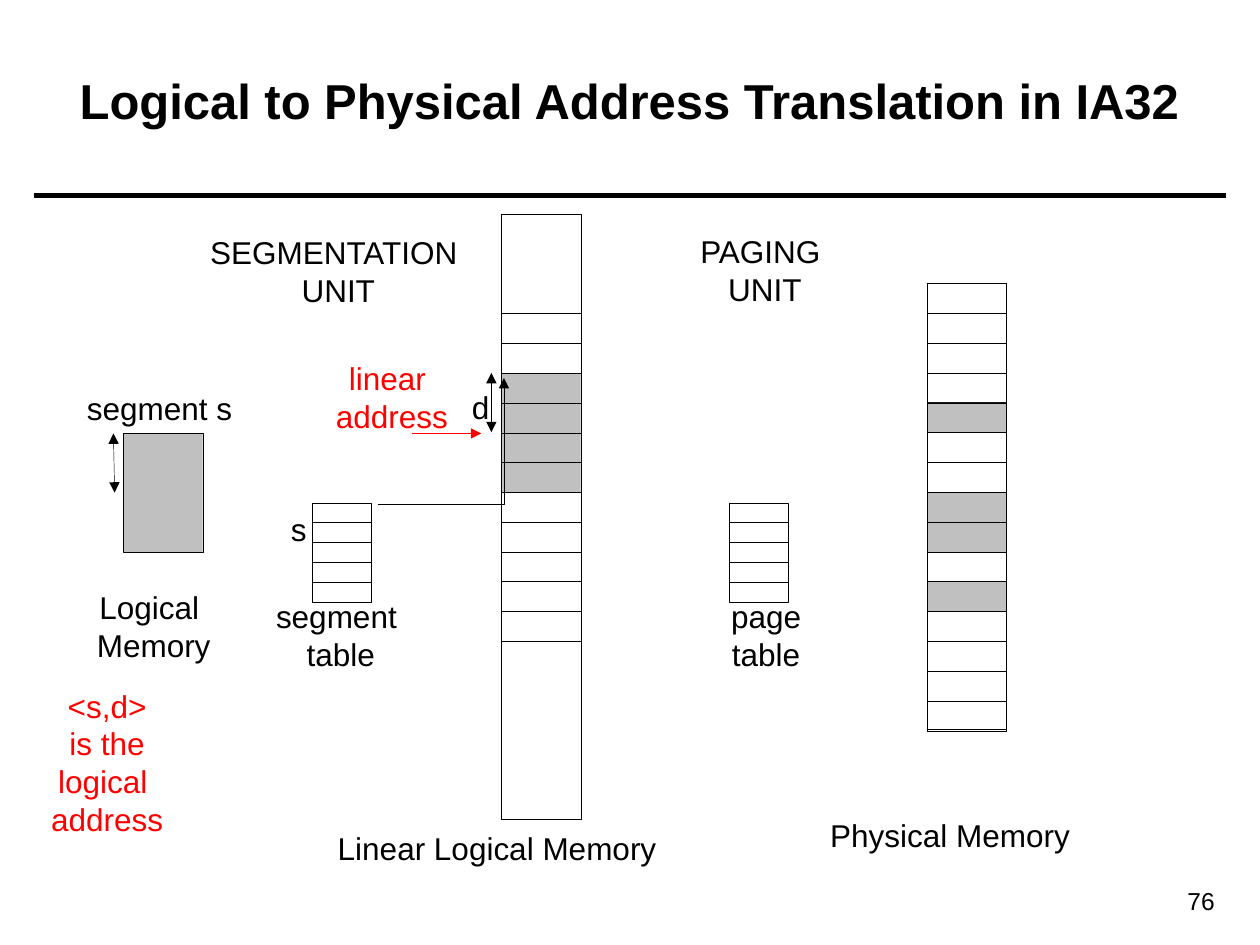
from lxml.etree import SubElement
from pptx import Presentation
from pptx.dml.color import RGBColor
from pptx.enum.shapes import MSO_CONNECTOR, MSO_SHAPE
from pptx.enum.text import MSO_ANCHOR, MSO_AUTO_SIZE, PP_ALIGN
from pptx.oxml.ns import qn
from pptx.util import Inches, Pt

COLORS = {"black": "000000", "red": "FF0000", "gray": "C0C0C0"}
FONT = "Arial"
THIN = 0.25

TITLE = ("Logical to Physical Address Translation in IA32", (0.35, 0.17, 9.29, 1.25))
PAGE_NUMBER = ("76", (8.7, 6.98, 1.04, 0.34))

LABELS = [
    (["Linear Logical Memory"], (2.58, 6.53, 2.73, 0.4), "black"),
    (["segment s "], (0.59, 3.04, 1.42, 0.4), "black"),
    (["s"], (2.21, 4, 0.32, 0.4), "black"),
    (["d"], (3.58, 3.03, 0.47, 0.41), "black"),
    (["Logical ", "Memory"], (0.67, 4.62, 1.1, 0.7), "black"),
    (["Physical Memory"], (6.49, 6.43, 2.1, 0.4), "black"),
    (["segment ", "table"], (2.09, 4.69, 1.23, 0.7), "black"),
    (["page ", "table"], (5.67, 4.69, 0.82, 0.7), "black"),
    (["SEGMENTATION ", "UNIT"], (1.55, 1.8, 2.27, 0.7), "black"),
    (["PAGING ", "UNIT"], (5.45, 1.79, 1.24, 0.7), "black"),
    (["<s,d>\nis the\nlogical \naddress"], (0.3, 5.4, 1.1, 1.32), "red"),
    (["linear \naddress"], (2.56, 2.8, 1.1, 0.71), "red"),
]

BLOCKS = [
    ((0.98, 3.44, 0.63, 0.94), "gray"),
    ((3.98, 1.7, 0.63, 4.8), None),
    ((7.36, 2.25, 0.63, 3.54), None),
]

# left, top, width, bottom, cells: "#" used, "." free, " " no cell
STACKS = [
    (2.48, 3.99, 0.47, 4.78, "....."),
    (5.79, 3.99, 0.47, 4.78, "....."),
    (3.98, 2.49, 0.63, 5.09, "..####... ."),
    (7.36, 2.25, 0.63, 5.8, "....#..##.#...."),
]

RULE = ((0.27, 1.55), (9.73, 1.55))
ARROWS = [
    ((0.9, 3.44), (0.91, 3.91), "black", ("headEnd", "tailEnd")),
    ((3.9, 2.96), (3.9, 3.43), "black", ("headEnd", "tailEnd")),
    ((3.27, 3.44), (3.82, 3.44), "red", ("tailEnd",)),
]

CURVE_START = (2.87, 4.22)
CURVE_POINTS = [
    (2.98, 4.15), (3.1, 4.14), (3.21, 4.08),
    (3.34, 3.92), (3.19, 4.08), (3.3, 4),
    (3.34, 3.96), (3.37, 3.89), (3.42, 3.85),
    (3.44, 3.77), (3.47, 3.75), (3.5, 3.69),
    (3.53, 3.56), (3.53, 3.41), (3.6, 3.33),
    (3.62, 3.24), (3.68, 3.17), (3.73, 3.13),
    (3.79, 3.03), (3.89, 2.96), (3.98, 2.96),
]


def rgb(name):
    return RGBColor.from_string(COLORS[name])


def set_line(sp, color="black", width=THIN, ends=()):
    sp.line.color.rgb = rgb(color)
    sp.line.width = Pt(width)
    for end in ends:
        SubElement(sp.line._get_or_add_ln(), qn(f"a:{end}"), type="triangle")


def add_text(s, paragraphs, box, color="black", size=18, bold=False,
             align=PP_ALIGN.CENTER, wrap=False):
    tf = s.shapes.add_textbox(*map(Inches, box)).text_frame
    tf.word_wrap = wrap
    tf.auto_size = MSO_AUTO_SIZE.NONE if wrap else MSO_AUTO_SIZE.SHAPE_TO_FIT_TEXT
    for i, paragraph in enumerate(paragraphs):
        p = tf.add_paragraph() if i else tf.paragraphs[0]
        p.alignment = align
        for j, text in enumerate(paragraph.split("\n")):
            if j:
                p.add_line_break()
            r = p.add_run()
            r.text = text
            r.font.name = FONT
            r.font.size = Pt(size)
            r.font.bold = bold
            r.font.color.rgb = rgb(color)
    return tf


def add_rect(s, box, fill=None):
    sp = s.shapes.add_shape(MSO_SHAPE.RECTANGLE, *map(Inches, box))
    sp.shadow.inherit = False
    if fill:
        sp.fill.solid()
        sp.fill.fore_color.rgb = rgb(fill)
    else:
        sp.fill.background()
    set_line(sp)


def add_stack(s, left, top, width, bottom, cells):
    height = (bottom - top) / len(cells)
    for i, cell in enumerate(cells):
        if cell != " ":
            box = (left, top + i * height, width, height)
            add_rect(s, box, "gray" if cell == "#" else None)


def add_line(s, start, end, color="black", ends=(), width=THIN):
    sp = s.shapes.add_connector(MSO_CONNECTOR.STRAIGHT, *map(Inches, start + end))
    set_line(sp, color, width, ends)
    SubElement(sp._element.spPr, qn("a:effectLst"))


def add_curve(s, start, points):
    builder = s.shapes.build_freeform(*start, scale=Inches(1))
    builder.add_line_segments(points, close=False)
    sp = builder.convert_to_shape()
    sp.shadow.inherit = False
    sp.fill.background()
    set_line(sp, ends=("tailEnd",))
    outline = next(sp._element.iter(qn("a:moveTo"))).getparent()
    segments = outline.findall(qn("a:lnTo"))
    for i in range(0, len(segments), 3):
        bezier = SubElement(outline, qn("a:cubicBezTo"))
        for segment in segments[i:i + 3]:
            bezier.append(segment[0])
            outline.remove(segment)


def main():
    prs = Presentation()
    prs.slide_width, prs.slide_height = Inches(10), Inches(7.5)
    s = prs.slides.add_slide(prs.slide_layouts[6])

    add_line(s, *RULE, width=3)
    text, box = PAGE_NUMBER
    add_text(s, [text], box, size=14, align=PP_ALIGN.RIGHT, wrap=True)
    text, box = TITLE
    tf = add_text(s, [text], box, size=28, bold=True, wrap=True)
    tf.vertical_anchor = MSO_ANCHOR.MIDDLE

    for box, fill in BLOCKS:
        add_rect(s, box, fill)
    for stack in STACKS:
        add_stack(s, *stack)
    add_curve(s, CURVE_START, CURVE_POINTS)
    for arrow in ARROWS:
        add_line(s, *arrow)
    for label in LABELS:
        add_text(s, *label)

    prs.save("out.pptx")


if __name__ == "__main__":
    main()
